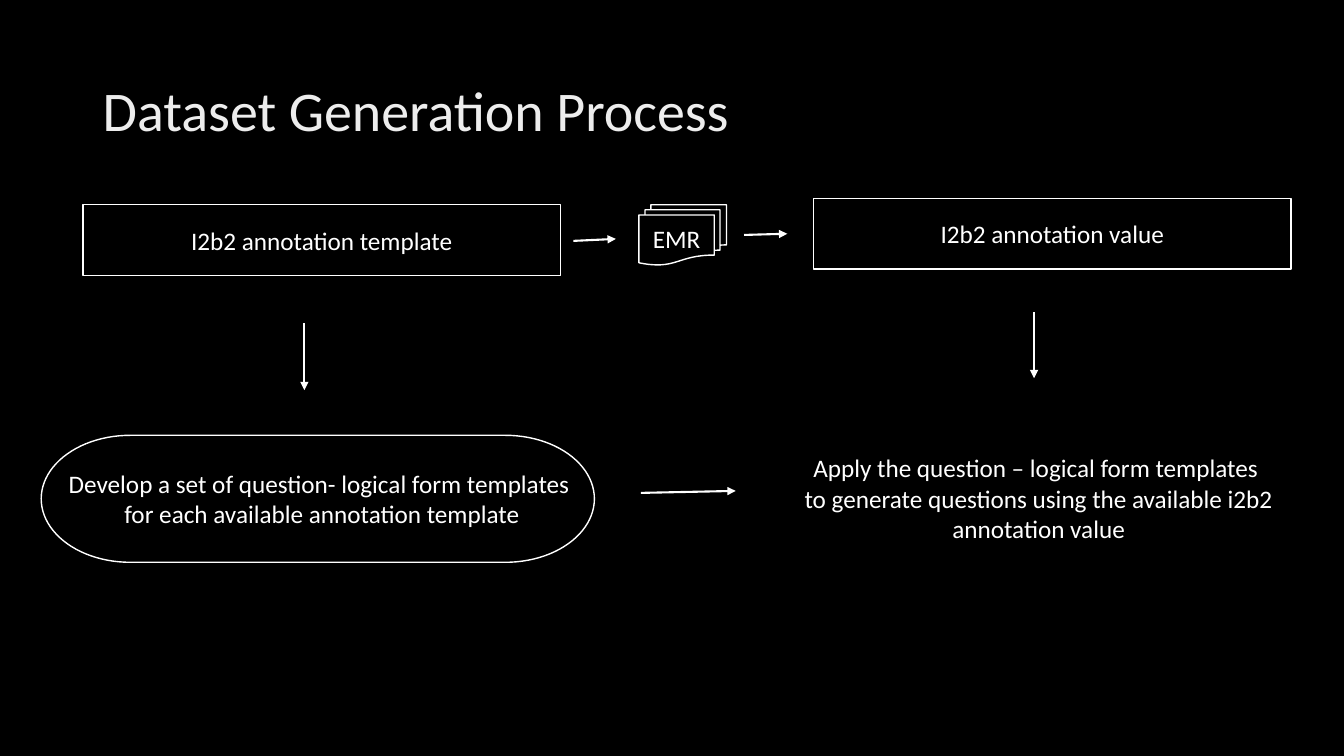
from lxml import etree
from pptx import Presentation
from pptx.dml.color import RGBColor
from pptx.enum import shapes, text
from pptx.oxml.ns import qn
from pptx.util import Cm, Pt

BLACK, WHITE, TITLE_GREY = "000000", "FFFFFF", "EDEDED"
SHAPE = shapes.MSO_SHAPE


def colour(value):
    return RGBColor.from_string(value)


def write_text(shape, lines, size=18, font_colour=WHITE,
               alignment=text.PP_ALIGN.CENTER, anchor=text.MSO_ANCHOR.MIDDLE,
               line_spacing=None):
    """Fill the shape with one paragraph per line."""
    frame = shape.text_frame
    frame.word_wrap = True
    frame.vertical_anchor = anchor
    for index, line in enumerate(lines):
        paragraph = frame.add_paragraph() if index else frame.paragraphs[0]
        paragraph.alignment = alignment
        paragraph.line_spacing = line_spacing
        run = paragraph.add_run()
        run.text = line
        run.font.name = "Calibri"
        run.font.size = Pt(size)
        run.font.color.rgb = colour(font_colour)


def add_text(slide, box, lines, **style):
    shape = slide.shapes.add_textbox(*map(Cm, box))
    write_text(shape, lines, **style)


def add_outline(slide, preset, box, label=None):
    """Add an unfilled white-edged shape, with a centred label if given."""
    shape = slide.shapes.add_shape(preset, *map(Cm, box))
    shape.shadow.inherit = False
    shape.fill.background()
    shape.line.color.rgb = colour(WHITE)
    shape.line.width = Pt(1)
    if label:
        write_text(shape, [label])


def add_arrow(slide, start, end):
    arrow = slide.shapes.add_connector(
        shapes.MSO_CONNECTOR.STRAIGHT, *map(Cm, start + end))
    arrow.line.color.rgb = colour(WHITE)
    arrow.line.width = Pt(1.5)
    etree.SubElement(arrow.line._get_or_add_ln(), qn("a:tailEnd"), type="triangle")
    etree.SubElement(arrow._element.spPr, qn("a:effectLst"))


def main():
    presentation = Presentation()
    presentation.slide_width, presentation.slide_height = Cm(33.87), Cm(19.05)
    slide = presentation.slides.add_slide(presentation.slide_layouts[6])
    slide.background.fill.solid()
    slide.background.fill.fore_color.rgb = colour(BLACK)

    add_text(slide, (2.34, 1.02, 29.21, 3.68), ["Dataset Generation Process"],
             size=40, font_colour=TITLE_GREY, alignment=text.PP_ALIGN.LEFT,
             line_spacing=0.9)

    add_outline(slide, SHAPE.RECTANGLE, (2.09, 5.16, 12.04, 1.78),
                "I2b2 annotation template")
    add_outline(slide, SHAPE.FLOWCHART_MULTIDOCUMENT, (16.1, 5.16, 2.21, 1.52), "EMR")
    add_outline(slide, SHAPE.RECTANGLE, (20.5, 5, 12.04, 1.78),
                "I2b2 annotation value")
    add_outline(slide, SHAPE.FLOWCHART_TERMINATOR, (1.04, 10.97, 13.94, 3.2))

    add_text(slide, (1.09, 11.68, 14.05, 1.8),
             ["Develop a set of question- logical form templates ",
              "for each available annotation template"],
             anchor=text.MSO_ANCHOR.TOP)
    add_text(slide, (19.56, 11.28, 13.23, 2.57),
             ["Apply the question – logical form templates ",
              "to generate questions using the available i2b2 annotation value"],
             anchor=text.MSO_ANCHOR.TOP)

    for start, end in (
        ((14.45, 6.07), (15.52, 6.02)),
        ((18.75, 5.92), (19.84, 5.89)),
        ((7.67, 8.15), (7.67, 9.83)),
        ((26.06, 7.87), (26.06, 9.53)),
        ((16.15, 12.42), (18.54, 12.37)),
    ):
        add_arrow(slide, start, end)

    presentation.save("out.pptx")


if __name__ == "__main__":
    main()
